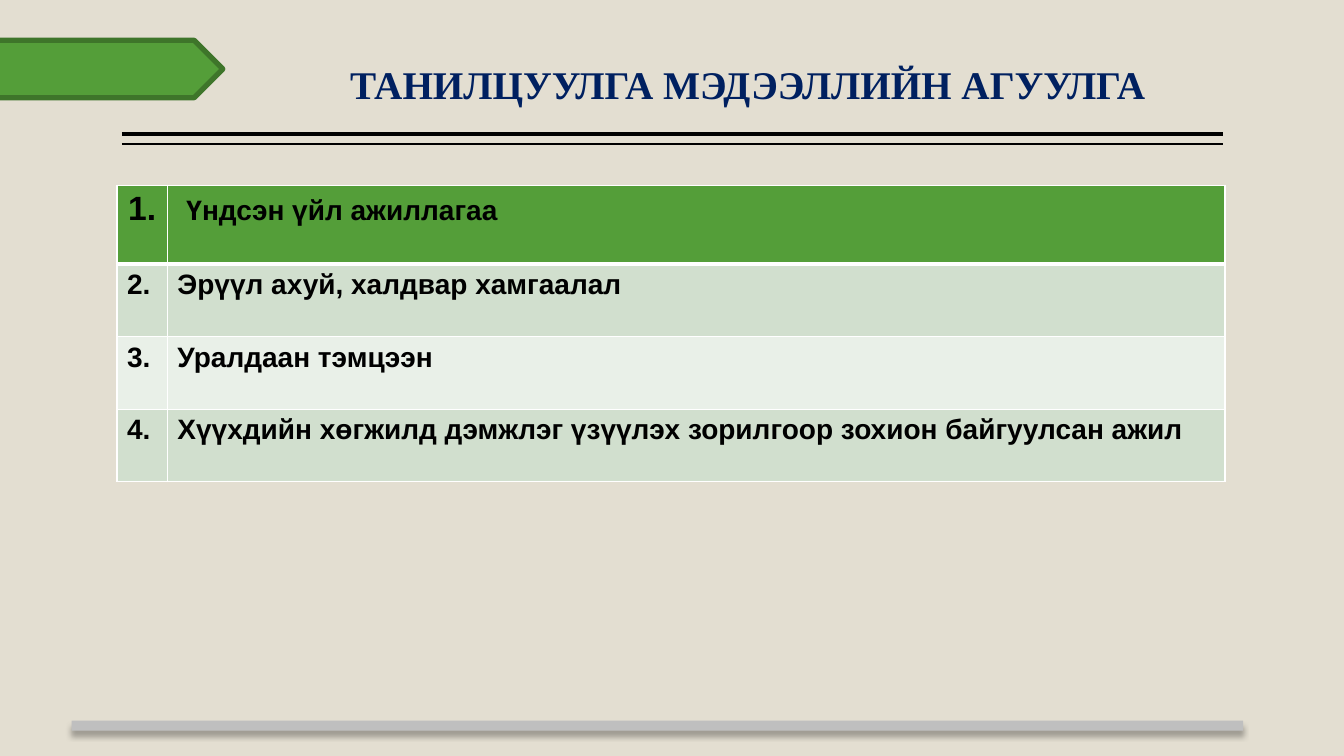
from lxml import etree
from pptx import Presentation
from pptx.dml.color import RGBColor
from pptx.enum.shapes import MSO_CONNECTOR, MSO_SHAPE
from pptx.enum.text import MSO_ANCHOR, PP_ALIGN
from pptx.oxml import parse_xml
from pptx.oxml.ns import nsdecls, qn
from pptx.util import Inches, Pt

STRAIGHT = MSO_CONNECTOR.STRAIGHT
PENTAGON = MSO_SHAPE.PENTAGON
RECTANGLE = MSO_SHAPE.RECTANGLE
BOTTOM = MSO_ANCHOR.BOTTOM
LEFT, CENTER, JUSTIFY = PP_ALIGN.LEFT, PP_ALIGN.CENTER, PP_ALIGN.JUSTIFY

COLORS = {
    "background": "E3DED1",
    "black": "000000",
    "white": "FFFFFF",
    "green": "549E39",
    "dark_green": "3E752A",
    "navy": "002060",
    "gray": "BFBFBF",
    "band_dark": "D1DFCE",
    "band_light": "E9F0E8",
}

TOPICS = [
    "Үндсэн үйл ажиллагаа",
    "Эрүүл ахуй, халдвар хамгаалал",
    "Уралдаан тэмцээн",
    "Хүүхдийн хөгжилд дэмжлэг үзүүлэх зорилгоор зохион байгуулсан ажил",
]


class SlideBuilder:
    """Hold the style and the current slide, and add each kind of element."""

    def __init__(self, presentation):
        self.slide = presentation.slides.add_slide(presentation.slide_layouts[6])
        self.fill(self.slide.background.fill, "background")

    def fill(self, fill, color):
        fill.solid()
        fill.fore_color.rgb = RGBColor.from_string(COLORS[color])

    def format_text(self, paragraph, font_name, size, color, alignment):
        paragraph.alignment = alignment
        for run in paragraph.runs:
            run.font.name = font_name
            run.font.size = Pt(size)
            run.font.bold = True
            run.font.color.rgb = RGBColor.from_string(COLORS[color])

    def rule(self, left, right, top, width):
        line = self.slide.shapes.add_connector(
            STRAIGHT, Inches(left), Inches(top), Inches(right), Inches(top))
        self.fill(line.line.fill, "black")
        line.line.width = Pt(width)
        etree.SubElement(line._element.spPr, qn("a:effectLst"))

    def shape(self, kind, left, top, width, height, color, outline=None):
        shape = self.slide.shapes.add_shape(
            kind, Inches(left), Inches(top), Inches(width), Inches(height))
        shape.shadow.inherit = False
        self.fill(shape.fill, color)
        if outline:
            self.fill(shape.line.fill, outline)
            shape.line.width = Pt(3.78)
        else:
            shape.line.fill.background()
        return shape

    def drop_shadow(self, shape):
        effects = shape._element.spPr.find(qn("a:effectLst"))
        effects.append(parse_xml(
            f'<a:outerShdw {nsdecls("a")} blurRad="{Pt(4)}" dist="{Pt(4)}" '
            f'dir="5400000" rotWithShape="0"><a:srgbClr val="{COLORS["black"]}">'
            '<a:alpha val="30000"/></a:srgbClr></a:outerShdw>'))

    def title(self, text, left, top, width, height):
        box = self.slide.shapes.add_textbox(
            Inches(left), Inches(top), Inches(width), Inches(height))
        text_frame = box.text_frame
        text_frame.word_wrap = True
        text_frame.vertical_anchor = BOTTOM
        text_frame.margin_left = text_frame.margin_right = 0
        text_frame.text = text
        paragraph = text_frame.paragraphs[0]
        paragraph.line_spacing = 0.9
        self.format_text(paragraph, "Times New Roman", 28, "navy", CENTER)

    def cell(self, cell, text, size, alignment, color, border_widths):
        cell.text = text
        self.format_text(
            cell.text_frame.paragraphs[0], "Arial", size, "black", alignment)
        self.fill(cell.fill, color)
        properties = cell._tc.get_or_add_tcPr()
        for index, (side, width) in enumerate(border_widths.items()):
            properties.insert(index, parse_xml(
                f'<a:ln{side} {nsdecls("a")} w="{Pt(width)}"><a:solidFill>'
                f'<a:srgbClr val="{COLORS["white"]}"/></a:solidFill></a:ln{side}>'))

    def topic_table(self, topics, left, top, column_widths, row_heights):
        table = self.slide.shapes.add_table(
            len(topics), len(column_widths), Inches(left), Inches(top),
            Inches(sum(column_widths)), Inches(sum(row_heights))).table
        for column, width in zip(table.columns, column_widths):
            column.width = Inches(width)
        for index, topic in enumerate(topics):
            table.rows[index].height = Inches(row_heights[index])
            header = index == 0
            band = "band_dark" if index % 2 else "band_light"
            color = "green" if header else band
            borders = {"L": 1, "R": 1, "T": 3 if index == 1 else 1,
                       "B": 3 if header else 1}
            number_cell, topic_cell = table.cell(index, 0), table.cell(index, 1)
            self.cell(number_cell, f"{index + 1}.", 24 if header else 20,
                      CENTER if header else LEFT, color, borders)
            self.cell(topic_cell, topic, 20, JUSTIFY, color, borders)
        header_cell = table.cell(0, 1)
        header_cell.margin_left = Inches(0.19)
        header_cell.margin_top = Inches(0.1)


def main():
    presentation = Presentation()
    presentation.slide_width = Inches(13.33)
    presentation.slide_height = Inches(7.5)
    builder = SlideBuilder(presentation)
    builder.rule(1.21, 12.13, 1.33, 3)
    builder.rule(1.21, 12.13, 1.43, 1)
    builder.shape(PENTAGON, -0.14, 0.4, 2.35, 0.57, "green", "dark_green")
    builder.title("ТАНИЛЦУУЛГА МЭДЭЭЛЛИЙН АГУУЛГА", 2.33, 0.4, 10.17, 0.72)
    footer_bar = builder.shape(RECTANGLE, 0.71, 7.15, 11.62, 0.1, "gray")
    builder.drop_shadow(footer_bar)
    builder.topic_table(TOPICS, 1.16, 1.84, [0.5, 10.49], [0.78] + [0.72] * 3)
    presentation.save("out.pptx")


if __name__ == "__main__":
    main()
